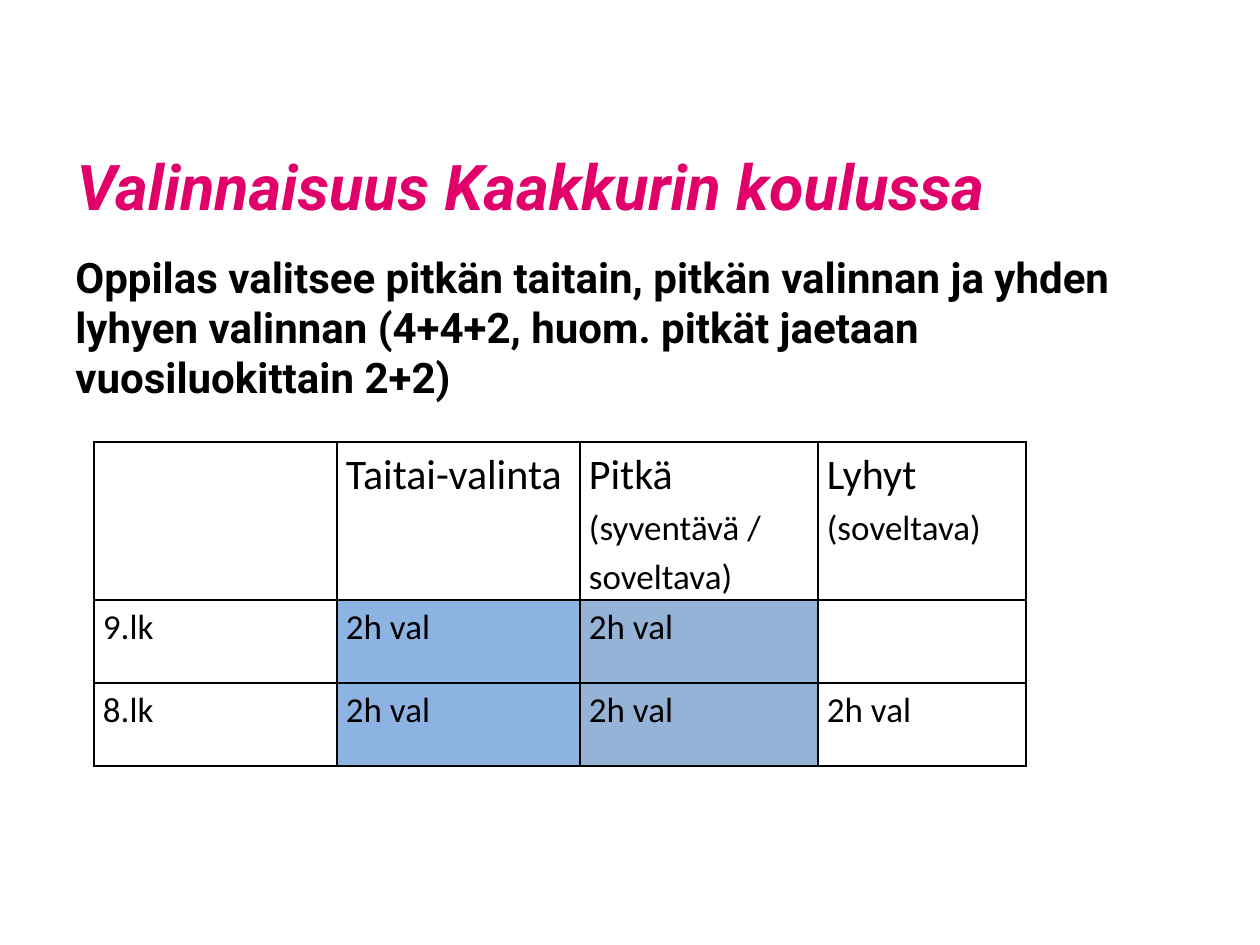
from dataclasses import dataclass

from lxml import etree
from pptx import Presentation
from pptx.dml.color import RGBColor
from pptx.enum.text import MSO_ANCHOR, MSO_AUTO_SIZE, PP_ALIGN
from pptx.oxml.ns import qn
from pptx.util import Emu, Pt

LEFT = PP_ALIGN.LEFT
TOP = MSO_ANCHOR.TOP
MIDDLE = MSO_ANCHOR.MIDDLE
FIXED = MSO_AUTO_SIZE.NONE


@dataclass(frozen=True)
class Theme:
    head: str = "Roboto"
    body: str = "Calibri"
    pink: str = "E10069"
    black: str = "000000"
    sky: str = "8DB3E2"
    steel: str = "95B3D7"
    title: int = 36
    large: int = 24
    small: int = 20


THEME = Theme()
SCALE = 914400 / 126


def px(count):
    return Emu(round(count * SCALE))


def write(frame, runs, face=THEME.body, color=THEME.black, bold=False,
          italic=False, anchor=TOP, line=None, after=None):
    frame.word_wrap = True
    frame.vertical_anchor = anchor
    par = frame.paragraphs[0]
    par.alignment = LEFT
    par.line_spacing = line
    par.space_after = after
    for text, size in runs:
        run = par.add_run()
        run.text = text
        font = run.font
        font.name = face
        font.size = Pt(size)
        font.bold = bold
        font.italic = italic
        font.color.rgb = RGBColor.from_string(color)


def add_title(slide, left, top, width, height):
    title = slide.shapes.title
    title.left, title.top = px(left), px(top)
    title.width, title.height = px(width), px(height)
    title.text_frame.auto_size = FIXED
    write(title.text_frame, [("Valinnaisuus Kaakkurin koulussa", THEME.title)],
          face=THEME.head, color=THEME.pink, bold=True, italic=True,
          anchor=MIDDLE)


def add_intro(slide, left, top, width, height):
    box = slide.shapes.add_textbox(px(left), px(top), px(width), px(height))
    text = ("Oppilas valitsee pitkän taitain, pitkän valinnan ja yhden lyhyen "
            "valinnan (4+4+2, huom. pitkät jaetaan vuosiluokittain 2+2)")
    write(box.text_frame, [(text, THEME.large)], face=THEME.head, bold=True)


def add_border(cell):
    props = cell._tc.get_or_add_tcPr()
    for side in ("lnL", "lnR", "lnT", "lnB"):
        line = etree.SubElement(props, qn(f"a:{side}"), w=str(Pt(1)))
        fill = etree.SubElement(line, qn("a:solidFill"))
        etree.SubElement(fill, qn("a:srgbClr"), val=THEME.black)


def fill_cell(cell, runs, color):
    cell.margin_left = cell.margin_right = px(9)
    cell.margin_top = cell.margin_bottom = 0
    add_border(cell)
    if color:
        cell.fill.solid()
        cell.fill.fore_color.rgb = RGBColor.from_string(color)
    else:
        cell.fill.background()
    write(cell.text_frame, runs, line=1.15, after=Pt(10))


def add_hours(slide, left, top, widths, heights):
    big, small = THEME.large, THEME.small
    hours = [("2h val", small)]
    rows = [
        [[], [("Taitai-valinta", big)],
         [("Pitkä ", big), ("(syventävä / soveltava)", small)],
         [("Lyhyt ", big), ("(soveltava)", small)]],
        [[("9.lk", small)], hours, hours, []],
        [[("8.lk", small)], hours, hours, hours],
    ]
    fills = [None, THEME.sky, THEME.steel, None]
    frame = slide.shapes.add_table(len(rows), len(widths), px(left), px(top),
                                   px(sum(widths)), px(sum(heights)))
    table = frame.table
    table.first_row = table.horz_banding = False
    for col, width in zip(table.columns, widths):
        col.width = px(width)
    for row, height in zip(table.rows, heights):
        row.height = px(height)
    for r, row in enumerate(rows):
        for c, runs in enumerate(row):
            fill_cell(table.cell(r, c), runs, fills[c] if r else None)


def main():
    deck = Presentation()
    deck.slide_width, deck.slide_height = px(1260), px(945)
    slide = deck.slides.add_slide(deck.slide_layouts[5])
    add_title(slide, 64, 125, 1111, 120)
    add_intro(slide, 63, 245, 1134, 644)
    add_hours(slide, 94, 442, [243, 243, 238, 208], [158, 83, 83])
    deck.save("out.pptx")


if __name__ == "__main__":
    main()
